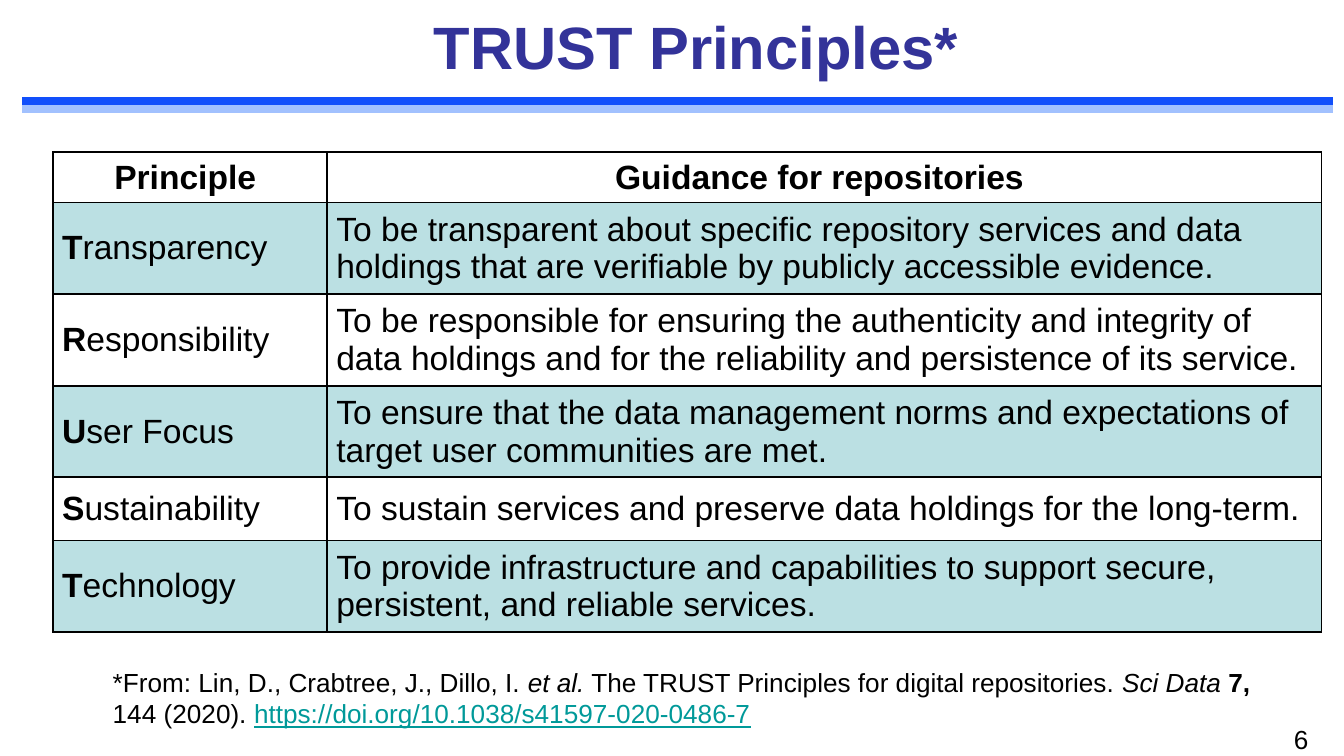
from dataclasses import dataclass
from typing import NamedTuple

from lxml.etree import SubElement
from pptx import Presentation
from pptx.dml.color import RGBColor
from pptx.enum.shapes import MSO_CONNECTOR
from pptx.enum.text import MSO_ANCHOR, MSO_AUTO_SIZE, PP_ALIGN
from pptx.oxml.ns import qn
from pptx.slide import Slide
from pptx.table import _Cell
from pptx.text.text import _Paragraph
from pptx.util import Pt


@dataclass(frozen=True)
class Theme:
    font: str = "Arial"
    ink: str = "000000"
    heading: str = "333399"
    link: str = "009999"
    band: str = "BBE0E3"
    rule_dark: str = "114FFB"
    rule_light: str = "A2C1FE"
    title_size: float = 32
    table_size: float = 18
    note_size: float = 14


class Span(NamedTuple):
    text: str
    bold: bool = False
    italic: bool = False
    underline: bool = False
    color: str = "000000"


class Principle(NamedTuple):
    name: str
    guidance: str
    height: float


class Box(NamedTuple):
    left: float
    top: float
    width: float
    height: float


class Rule(NamedTuple):
    top: float
    color: str


THEME = Theme()
RULES = [Rule(54, THEME.rule_dark), Rule(58.5, THEME.rule_light)]
RULE_LEFT, RULE_RIGHT = 12, 714
TITLE_BOX = Box(99.4, 2.2, 547.2, 50.4)
NUMBER_BOX = Box(558, 383.8, 150, 21)
CITATION_BOX = Box(53.3, 353.5, 649.4, 41)
TABLE_BOX = Box(28.3, 81.4, 679.7, 255.6)
COLUMN_WIDTHS = [146.9, 532.8]
HEADER_HEIGHT = 26.6
HEADINGS = ["Principle ", "Guidance for repositories "]
PRINCIPLES = [
    Principle("Transparency", "To be transparent about specific repository services and data "
              "holdings that are verifiable by publicly accessible evidence.", 48.5),
    Principle("Responsibility", "To be responsible for ensuring the authenticity and integrity of "
              "data holdings and for the reliability and persistence of its service.", 49.5),
    Principle("User Focus", "To ensure that the data management norms and expectations of "
              "target user communities are met.", 48.5),
    Principle("Sustainability",
              "To sustain services and preserve data holdings for the long-term.", 34),
    Principle("Technology", "To provide infrastructure and capabilities to support secure, "
              "persistent, and reliable services.", 48.5),
]
CITATION = [
    Span("*From: Lin, D., Crabtree, J., Dillo, I. "),
    Span("et al.", italic=True),
    Span(" The TRUST Principles for digital repositories. "),
    Span("Sci Data ", italic=True),
    Span("7, ", bold=True),
    Span("144 (2020). "),
    Span("https://doi.org/10.1038/s41597-020-0486-7", underline=True, color=THEME.link),
]


def write(paragraph: _Paragraph, spans: list[Span], size: float,
          align: PP_ALIGN = PP_ALIGN.LEFT) -> None:
    paragraph.alignment = align
    for span in spans:
        run = paragraph.add_run()
        run.text = span.text
        run.font.name = THEME.font
        run.font.size = Pt(size)
        run.font.bold = span.bold
        run.font.italic = span.italic
        run.font.underline = span.underline
        run.font.color.rgb = RGBColor.from_string(span.color)


def add_rule(slide: Slide, rule: Rule) -> None:
    line = slide.shapes.add_connector(
        MSO_CONNECTOR.STRAIGHT, Pt(RULE_LEFT), Pt(rule.top), Pt(RULE_RIGHT), Pt(rule.top))
    line.line.color.rgb = RGBColor.from_string(rule.color)
    line.line.width = Pt(4)
    SubElement(line._element.spPr, qn("a:effectLst"))


def add_title(slide: Slide, text: str) -> None:
    title = slide.shapes.title
    title.left, title.top, title.width, title.height = map(Pt, TITLE_BOX)
    title.text_frame.vertical_anchor = MSO_ANCHOR.MIDDLE
    heading = title.text_frame.paragraphs[0]
    heading.line_spacing = 0.85
    write(heading, [Span(text, bold=True, color=THEME.heading)],
          THEME.title_size, PP_ALIGN.CENTER)


def add_note(slide: Slide, box: Box, spans: list[Span],
             align: PP_ALIGN = PP_ALIGN.LEFT) -> None:
    frame = slide.shapes.add_textbox(*map(Pt, box)).text_frame
    frame.word_wrap = True
    frame.auto_size = MSO_AUTO_SIZE.SHAPE_TO_FIT_TEXT
    write(frame.paragraphs[0], spans, THEME.note_size, align)


def add_borders(cell: _Cell) -> None:
    properties = cell._tc.get_or_add_tcPr()
    for position, side in enumerate(("a:lnL", "a:lnR", "a:lnT", "a:lnB")):
        border = SubElement(properties, qn(side), w=str(Pt(1)))
        properties.insert(position, border)
        fill = SubElement(border, qn("a:solidFill"))
        SubElement(fill, qn("a:srgbClr"), val=THEME.ink)


def fill_cell(cell: _Cell, spans: list[Span], banded: bool, align: PP_ALIGN) -> None:
    cell.margin_left = cell.margin_right = Pt(5)
    cell.margin_top = cell.margin_bottom = Pt(2.8)
    cell.vertical_anchor = MSO_ANCHOR.MIDDLE
    if banded:
        cell.fill.solid()
        cell.fill.fore_color.rgb = RGBColor.from_string(THEME.band)
    else:
        cell.fill.background()
    add_borders(cell)
    write(cell.text_frame.paragraphs[0], spans, THEME.table_size, align)


def add_principles(slide: Slide) -> None:
    table = slide.shapes.add_table(
        len(PRINCIPLES) + 1, len(HEADINGS), *map(Pt, TABLE_BOX)).table
    table.first_row = table.horz_banding = False
    for column, width in zip(table.columns, COLUMN_WIDTHS):
        column.width = Pt(width)
    table.rows[0].height = Pt(HEADER_HEIGHT)
    for column, heading in enumerate(HEADINGS):
        fill_cell(table.cell(0, column), [Span(heading, bold=True)], False, PP_ALIGN.CENTER)
    for row, principle in enumerate(PRINCIPLES, start=1):
        table.rows[row].height = Pt(principle.height)
        name = [Span(principle.name[0], bold=True), Span(principle.name[1:])]
        for column, spans in enumerate((name, [Span(principle.guidance)])):
            fill_cell(table.cell(row, column), spans, row % 2 == 1, PP_ALIGN.LEFT)


def main() -> None:
    presentation = Presentation()
    presentation.slide_width, presentation.slide_height = Pt(720), Pt(405)
    slide = presentation.slides.add_slide(presentation.slide_layouts[5])
    for rule in RULES:
        add_rule(slide, rule)
    add_title(slide, "TRUST Principles*")
    add_note(slide, NUMBER_BOX, [Span("6")], PP_ALIGN.RIGHT)
    add_note(slide, CITATION_BOX, CITATION)
    add_principles(slide)
    presentation.save("out.pptx")


if __name__ == "__main__":
    main()
